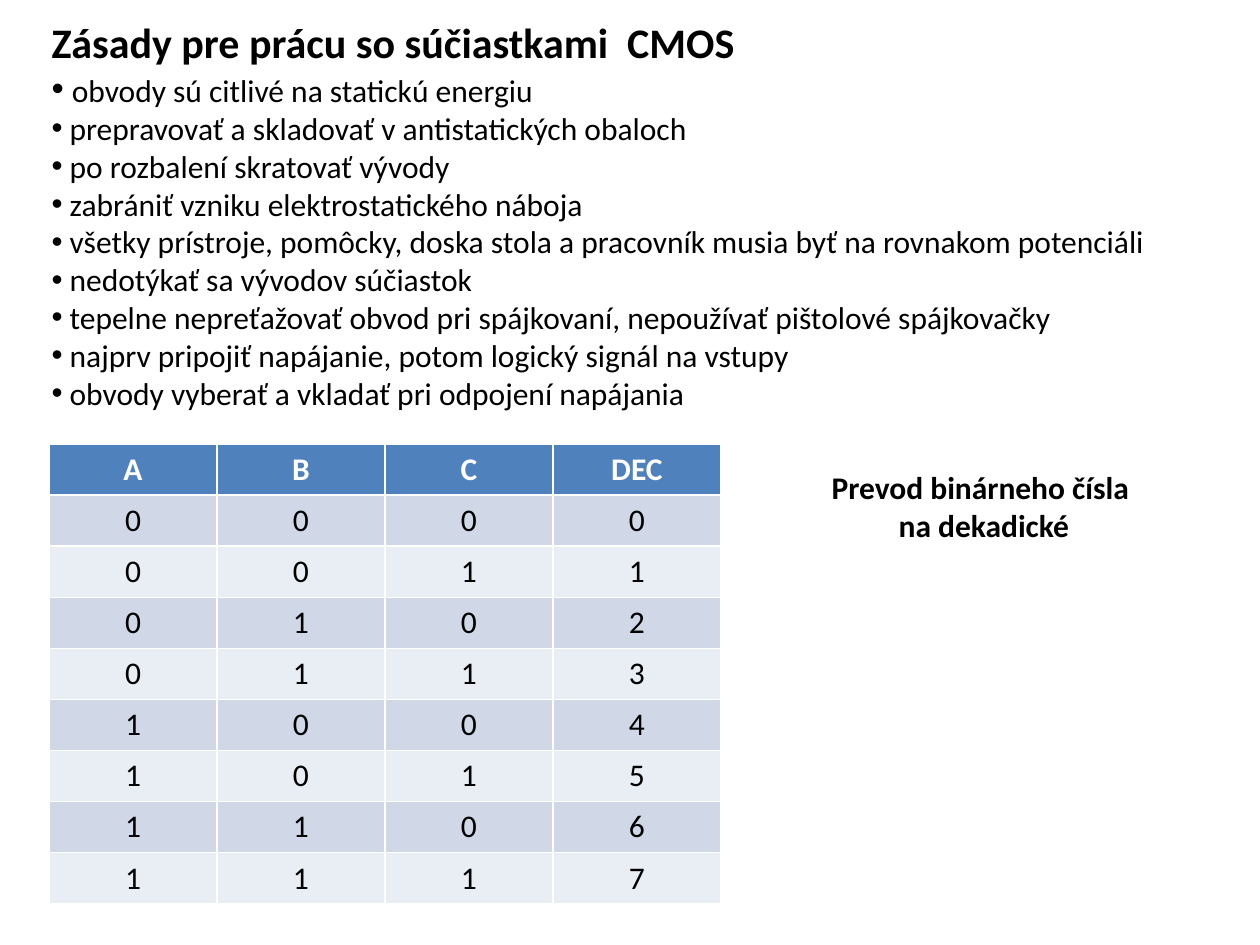
import pptx
import pptx.dml.color
import pptx.enum.text
import pptx.oxml
import pptx.oxml.ns
import pptx.util

PX = 7257
LEFT = pptx.enum.text.PP_ALIGN.LEFT
CENTER = pptx.enum.text.PP_ALIGN.CENTER
BULLET = f'<a:buChar {pptx.oxml.ns.nsdecls("a")} char="•"/>'


def colour(value):
    return pptx.dml.color.RGBColor.from_string(value)


def write(para, text, size=18, bold=False, color="000000", align=LEFT):
    para.alignment = align
    para.line_spacing = 1.0
    para.space_before = pptx.util.Pt(0)
    span = para.add_run()
    span.text = text
    span.font.name = "Calibri"
    span.font.size = pptx.util.Pt(size)
    span.font.bold = bold
    span.font.color.rgb = colour(color)


deck = pptx.Presentation()
deck.slide_width = pptx.util.Inches(10)
deck.slide_height = pptx.util.Inches(7.5)
page = deck.slides.add_slide(deck.slide_layouts[1])

title = page.shapes.title
body = page.placeholders[1]
caption = page.shapes.add_textbox(758 * PX, 462 * PX, 452 * PX, 89 * PX)
for box, top, height in [(title, 16, 51), (body, 67, 352)]:
    box.left, box.top = 39 * PX, top * PX
    box.width, box.height = 1210 * PX, height * PX
    box.text_frame.margin_top = box.text_frame.margin_bottom = 0
for box in (title, body, caption):
    box.text_frame.word_wrap = True
    box.text_frame.auto_size = pptx.enum.text.MSO_AUTO_SIZE.NONE
    box.text_frame.vertical_anchor = pptx.enum.text.MSO_ANCHOR.TOP

write(title.text_frame.paragraphs[0], "Zásady pre prácu so súčiastkami  CMOS", size=24, bold=True)

rules = [
    "obvody sú citlivé na statickú energiu",
    "prepravovať a skladovať v antistatických obaloch",
    "po rozbalení skratovať vývody",
    "zabrániť vzniku elektrostatického náboja",
    "všetky prístroje, pomôcky, doska stola a pracovník musia byť na rovnakom potenciáli",
    "nedotýkať sa vývodov súčiastok",
    "tepelne nepreťažovať obvod pri spájkovaní, nepoužívať pištolové spájkovačky",
    "najprv pripojiť napájanie, potom logický signál na vstupy",
    "obvody vyberať a vkladať pri odpojení napájania",
]
for index, rule in enumerate(rules):
    para = body.text_frame.add_paragraph() if index else body.text_frame.paragraphs[0]
    properties = para._p.get_or_add_pPr()
    properties.set("marL", "0")
    properties.set("indent", "0")
    properties.append(pptx.oxml.parse_xml(BULLET))
    write(para, " ", size=18 if index else 20)
    write(para, rule)

rows = [["A", "B", "C", "DEC"]]
rows += [[*f"{number:03b}", str(number)] for number in range(8)]
table = page.shapes.add_table(9, 4, 49 * PX, 444 * PX, 672 * PX, 459 * PX).table
for row, values in enumerate(rows):
    table.rows[row].height = 51 * PX
    header = row == 0
    fill = "4F81BD" if header else ("E9EDF4", "D0D8E8")[row % 2]
    for column, value in enumerate(values):
        cell = table.cell(row, column)
        cell.fill.solid()
        cell.fill.fore_color.rgb = colour(fill)
        write(cell.text_frame.paragraphs[0], value, bold=header,
              color="FFFFFF" if header else "000000", align=CENTER)

write(caption.text_frame.paragraphs[0], "Prevod binárneho čísla ", bold=True, align=CENTER)
write(caption.text_frame.add_paragraph(), "na dekadické", bold=True, align=CENTER)

deck.save("out.pptx")
